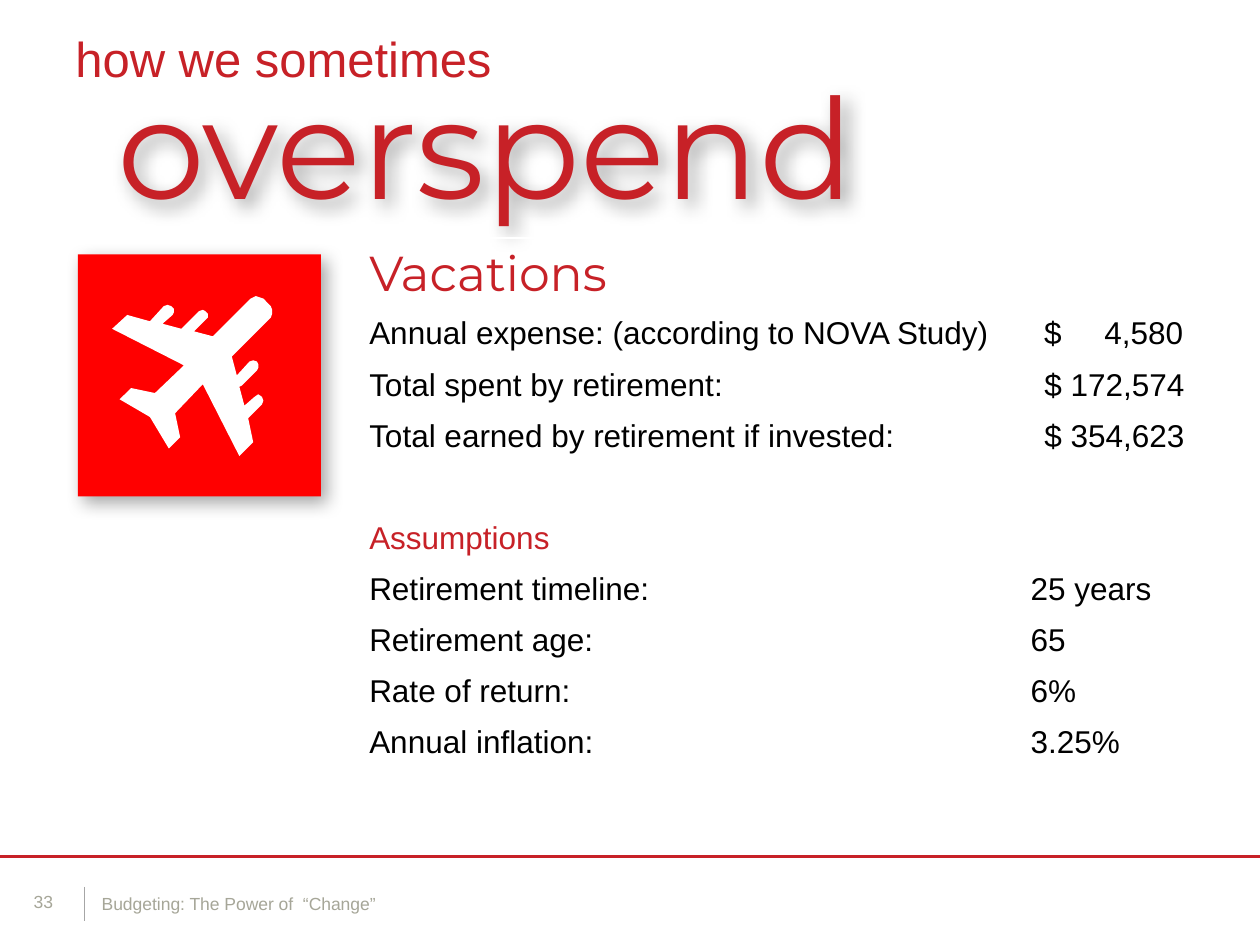
from dataclasses import dataclass

from lxml import etree
from pptx import Presentation
from pptx.dml.color import RGBColor
from pptx.enum.shapes import MSO_CONNECTOR, MSO_SHAPE
from pptx.enum.text import PP_ALIGN
from pptx.oxml.ns import qn
from pptx.util import Cm, Pt

STRAIGHT = MSO_CONNECTOR.STRAIGHT
RECTANGLE = MSO_SHAPE.RECTANGLE
LEFT, RIGHT = PP_ALIGN.LEFT, PP_ALIGN.RIGHT


@dataclass(frozen=True)
class TextStyle:
    size: float
    color: str
    name: str = "Arial"


@dataclass(frozen=True)
class Theme:
    red: str = "C72127"
    tile: str = "FF0000"
    white: str = "FFFFFF"
    divider: str = "A6A6A6"
    footer: TextStyle = TextStyle(10, "A6A698")
    lead: TextStyle = TextStyle(28, "C72127")
    headline: TextStyle = TextStyle(80, "C72127", "Montserrat")
    section: TextStyle = TextStyle(28, "C72127", "Montserrat")
    subsection: TextStyle = TextStyle(18, "C72127")
    body: TextStyle = TextStyle(18, "000000")


THEME = Theme()


@dataclass(frozen=True)
class Label:
    text: str
    left: float
    top: float
    width: float
    height: float
    style: TextStyle
    shadow: bool = False


@dataclass(frozen=True)
class Rule:
    start: tuple[float, float]
    end: tuple[float, float]
    color: str
    weight: float


@dataclass(frozen=True)
class Row:
    label: str = ""
    value: str = ""
    style: TextStyle = THEME.body
    align: PP_ALIGN = LEFT


LABELS = [
    Label("33", 0.43, 17.83, 1, 0.69, THEME.footer),
    Label("Budgeting: The Power of  “Change”", 1.8, 17.88, 10.77, 0.69, THEME.footer),
    Label("overspend", 2.11, 1.07, 17.55, 3.68, THEME.headline, True),
    Label("how we sometimes", 1.27, 0.46, 15.88, 1.45, THEME.lead),
]
RULES = [
    Rule((1.7, 17.88), (1.7, 18.57), THEME.divider, 0.25),
    Rule((0, 17.27), (25.4, 17.27), THEME.red, 1.5),
]
ROWS = [
    Row("Vacations", style=THEME.section),
    Row("Annual expense: (according to NOVA Study)", "$\t4,580"),
    Row("Total spent by retirement:", "$ 172,574", align=RIGHT),
    Row("Total earned by retirement if invested:", "$ 354,623", align=RIGHT),
    Row(),
    Row("Assumptions", style=THEME.subsection),
    Row("Retirement timeline:", "25 years"),
    Row("Retirement age:", "65"),
    Row("Rate of return:", "6%"),
    Row("Annual inflation:", "3.25%"),
]
# Airplane outline, in hundredths of an inch
AIRPLANE_UNIT = Cm(2.54) / 100
AIRPLANE = [
    (203, 235), (206, 236), (209, 237), (212, 240), (215, 243), (216, 246),
    (216, 249), (215, 252), (184, 283), (188, 298), (198, 287), (201, 286),
    (204, 287), (205, 289), (205, 292), (204, 294), (192, 306), (190, 307),
    (194, 322), (202, 315), (205, 313), (208, 315), (209, 318), (208, 321),
    (197, 332), (201, 351), (190, 362), (161, 305), (139, 328), (143, 347),
    (134, 356), (119, 331), (95, 317), (104, 308), (123, 312), (146, 290),
    (89, 261), (101, 250), (119, 255), (130, 243), (133, 242), (136, 243),
    (138, 245), (138, 248), (137, 250), (129, 257), (144, 261), (158, 247),
    (161, 246), (163, 247), (165, 249), (165, 252), (164, 253), (154, 263),
    (169, 267), (199, 237), (201, 236),
]


def write_text(paragraph, text: str, style: TextStyle) -> None:
    run = paragraph.add_run()
    run.text = text
    for attribute, value in {"name": style.name, "size": Pt(style.size)}.items():
        setattr(run.font, attribute, value)
    run.font.color.rgb = RGBColor.from_string(style.color)


def add_soft_shadow(shape) -> None:
    shape.shadow.inherit = False
    effects = shape._element.spPr.find(qn("a:effectLst"))
    shadow = etree.SubElement(effects, qn("a:outerShdw"), blurRad=str(Pt(10.2)),
                              dist=str(Pt(4.8)), dir="2700000", algn="tl", rotWithShape="0")
    color = etree.SubElement(shadow, qn("a:srgbClr"), val="000000")
    etree.SubElement(color, qn("a:alpha"), val="35000")


def fill_shape(shape, color: str) -> None:
    shape.shadow.inherit = False
    shape.fill.solid()
    shape.fill.fore_color.rgb = RGBColor.from_string(color)
    shape.line.fill.background()


def add_label(slide, label: Label) -> None:
    box = slide.shapes.add_textbox(Cm(label.left), Cm(label.top), Cm(label.width), Cm(label.height))
    box.text_frame.word_wrap = True
    write_text(box.text_frame.paragraphs[0], label.text, label.style)
    if label.shadow:
        add_soft_shadow(box)


def add_rule(slide, rule: Rule) -> None:
    connector = slide.shapes.add_connector(STRAIGHT, *map(Cm, rule.start + rule.end))
    connector.line.color.rgb = RGBColor.from_string(rule.color)
    connector.line.width = Pt(rule.weight)
    etree.SubElement(connector._element.spPr, qn("a:effectLst"))


def align_amount(cell, paragraph) -> None:
    """Set the currency sign at the left and the amount at a right tab."""
    cell.margin_left = Cm(0.53)
    tabs = etree.SubElement(paragraph._p.get_or_add_pPr(), qn("a:tabLst"))
    etree.SubElement(tabs, qn("a:tab"), pos=str(Cm(2.8)), algn="r")


def add_expense_table(slide, rows: list[Row]) -> None:
    first_height, height = Cm(1.45), Cm(1.03)
    widths = [Cm(13.33), Cm(3.61)]
    table = slide.shapes.add_table(len(rows), len(widths), Cm(7.19), Cm(4.8), sum(widths),
                                   first_height + height * (len(rows) - 1)).table
    for attribute in ("first_row", "horz_banding"):
        setattr(table, attribute, False)
    for column, width in zip(table.columns, widths):
        column.width = width
    for index, row in enumerate(rows):
        table.rows[index].height = height if index else first_height
        label_cell, value_cell = table.cell(index, 0), table.cell(index, 1)
        for cell in (label_cell, value_cell):
            cell.fill.background()
        if row.label:
            write_text(label_cell.text_frame.paragraphs[0], row.label, row.style)
        if not row.value:
            label_cell.merge(value_cell)
            continue
        paragraph = value_cell.text_frame.paragraphs[0]
        paragraph.alignment = row.align
        if "\t" in row.value:
            align_amount(value_cell, paragraph)
        write_text(paragraph, row.value, row.style)


def add_airplane_tile(slide) -> None:
    tile = slide.shapes.add_shape(RECTANGLE, Cm(1.57), Cm(5.13), Cm(4.9), Cm(4.88))
    fill_shape(tile, THEME.tile)
    add_soft_shadow(tile)
    builder = slide.shapes.build_freeform(*AIRPLANE[0], scale=AIRPLANE_UNIT)
    builder.add_line_segments(AIRPLANE[1:], close=True)
    fill_shape(builder.convert_to_shape(), THEME.white)


def main() -> None:
    presentation = Presentation()
    presentation.slide_width, presentation.slide_height = Cm(25.4), Cm(19.05)
    slide = presentation.slides.add_slide(presentation.slide_layouts[6])

    # Footer rules, page number and titles
    for rule in RULES:
        add_rule(slide, rule)
    for label in LABELS:
        add_label(slide, label)

    # Expense figures and icon
    add_expense_table(slide, ROWS)
    add_airplane_tile(slide)

    presentation.save("out.pptx")


if __name__ == "__main__":
    main()
